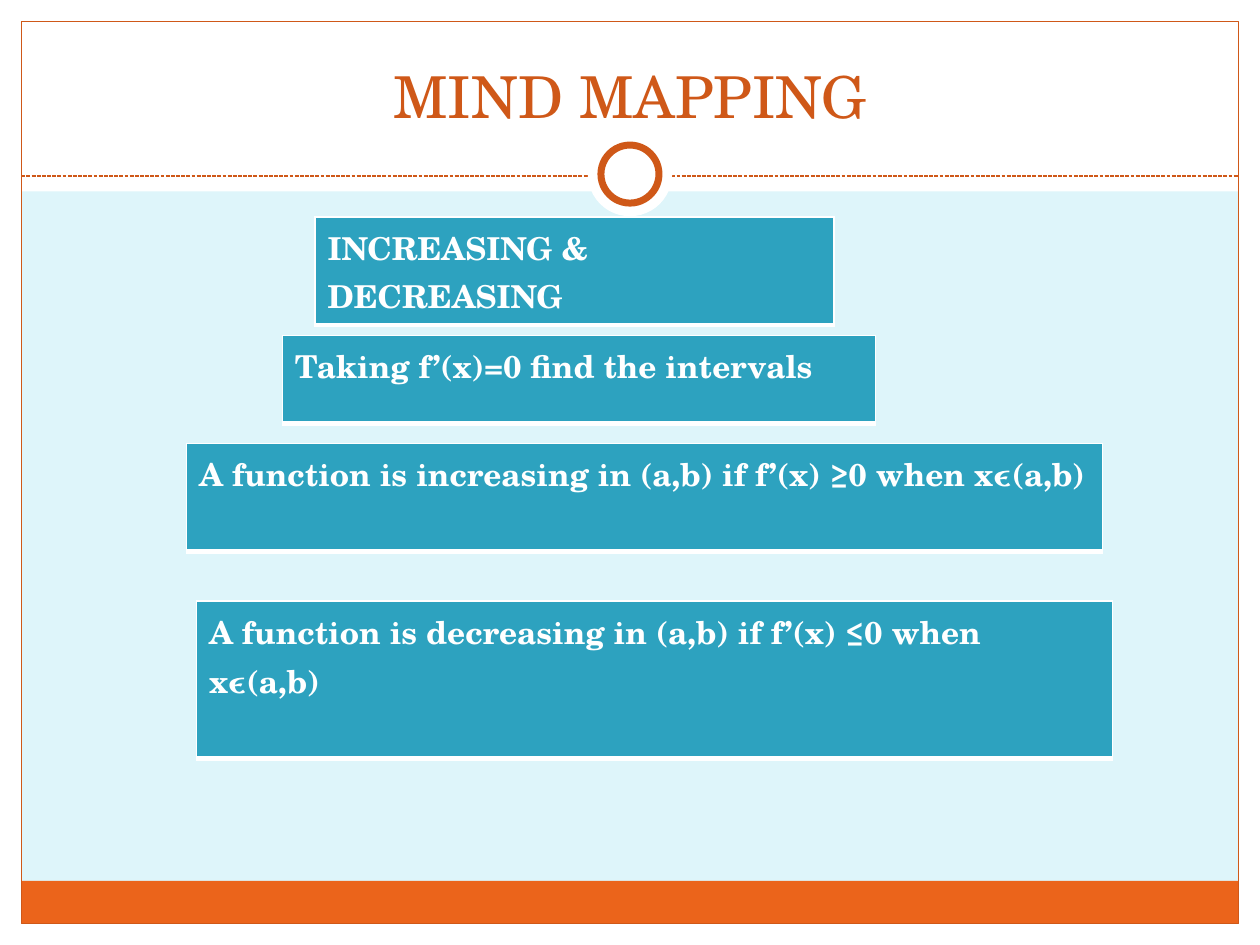
from lxml.etree import SubElement
from pptx import Presentation
from pptx.dml.color import RGBColor
from pptx.enum.dml import MSO_LINE_DASH_STYLE as Dash
from pptx.enum.shapes import MSO_CONNECTOR as Connector, MSO_SHAPE as Shape
from pptx.enum.text import MSO_ANCHOR as Anchor, PP_ALIGN as Align
from pptx.oxml.ns import qn
from pptx.util import Cm, Pt

FONT = "TeX Gyre Schola"
WHITE, SKY, TEAL = "FFFFFF", "DEF5FA", "2DA2BF"
ORANGE, RUST = "EB641B", "CF5818"
WIDTH, HEIGHT = 25.4, 19.05
MARGIN = 0.43


def color(value):
    return RGBColor.from_string(value)


def write(frame, text, size, fill, bold=False, align=Align.LEFT):
    frame.word_wrap = True
    paragraph = frame.paragraphs[0]
    paragraph.alignment = align
    run = paragraph.add_run()
    run.text = text
    run.font.name, run.font.size, run.font.bold = FONT, Pt(size), bold
    run.font.color.rgb = color(fill)


def add_shape(slide, kind, box, fill=None, line=None, line_width=0.75):
    shape = slide.shapes.add_shape(kind, *map(Cm, box))
    shape.shadow.inherit = False
    if fill:
        shape.fill.solid()
        shape.fill.fore_color.rgb = color(fill)
    else:
        shape.fill.background()
    if line:
        shape.line.color.rgb = color(line)
        shape.line.width = Pt(line_width)
    else:
        shape.line.fill.background()


def add_circle(slide, center_x, center_y, diameter, **style):
    box = (center_x - diameter / 2, center_y - diameter / 2, diameter, diameter)
    add_shape(slide, Shape.OVAL, box, **style)


def add_frame(slide, left, top, width, height):
    """White edges, footer band, border and ringed divider."""
    right, bottom = left + width, top + height
    header, footer = 3.86, 0.86
    edges = [
        (left, bottom - MARGIN, width, MARGIN),
        (left, top, width, header),
        (left, top, MARGIN, height),
        (right - MARGIN, top, MARGIN, height),
    ]
    for box in edges:
        add_shape(slide, Shape.RECTANGLE, box, fill=WHITE)

    inner_width = width - 2 * MARGIN
    band = (left + MARGIN, bottom - MARGIN - footer, inner_width, footer)
    add_shape(slide, Shape.RECTANGLE, band, fill=ORANGE)
    border = (left + MARGIN, top + MARGIN, inner_width, height - 2 * MARGIN)
    add_shape(slide, Shape.RECTANGLE, border, line=RUST)

    # Dashed divider
    divider_y = top + 3.55
    divider = slide.shapes.add_connector(
        Connector.STRAIGHT, Cm(left + MARGIN), Cm(divider_y),
        Cm(right - MARGIN), Cm(divider_y))
    divider.line.color.rgb = color(RUST)
    divider.line.width = Pt(0.75)
    divider.line.dash_style = Dash.SQUARE_DOT
    SubElement(divider._element.spPr, qn("a:effectLst"))

    # Ring on the divider
    center_x, center_y = left + width / 2, top + 3.51
    add_circle(slide, center_x, center_y, 1.7, fill=WHITE)
    add_circle(slide, center_x, center_y, 1.17, fill=WHITE, line=RUST, line_width=4)


def add_title(slide, text, left, top, width, height):
    box = slide.shapes.add_textbox(Cm(left), Cm(top), Cm(width), Cm(height))
    box.text_frame.vertical_anchor = Anchor.BOTTOM
    write(box.text_frame, text, 33, RUST, align=Align.CENTER)


def set_borders(cell, fill, widths):
    properties = cell._tc.get_or_add_tcPr()
    for index, (side, width) in enumerate(widths.items()):
        line = SubElement(properties, qn(f"a:ln{side}"), w=str(Pt(width)))
        solid = SubElement(line, qn("a:solidFill"))
        SubElement(solid, qn("a:srgbClr"), val=fill)
        properties.remove(line)
        properties.insert(index, line)


def add_step(slide, text, left, top, width, height):
    """One-cell table holding a step of the map."""
    frame = slide.shapes.add_table(1, 1, Cm(left), Cm(top), Cm(width), Cm(height))
    cell = frame.table.cell(0, 0)
    cell.fill.solid()
    cell.fill.fore_color.rgb = color(TEAL)
    set_borders(cell, WHITE, {"L": 1, "R": 1, "T": 1, "B": 3})
    write(cell.text_frame, text, 18, WHITE, bold=True)


def main():
    presentation = Presentation()
    presentation.slide_width, presentation.slide_height = Cm(WIDTH), Cm(HEIGHT)
    slide = presentation.slides.add_slide(presentation.slide_layouts[6])
    slide.background.fill.solid()
    slide.background.fill.fore_color.rgb = color(SKY)

    add_frame(slide, 0, 0, WIDTH, HEIGHT)
    add_title(slide, "MIND MAPPING", 0.85, 0.64, 23.7, 2.1)
    steps = [
        ("INCREASING & DECREASING", 6.35, 4.37, 10.46, 2.18),
        ("Taking f’(x)=0 find the intervals", 5.69, 6.76, 11.96, 1.78),
        ("A function is increasing in (a,b) if f’(x) ≥0 when xϵ(a,b)",
         3.76, 8.94, 18.47, 2.18),
        ("A function is decreasing in (a,b) if f’(x) ≤0 when xϵ(a,b)",
         3.96, 12.12, 18.47, 3.17),
    ]
    for step in steps:
        add_step(slide, *step)
    presentation.save("out.pptx")


if __name__ == "__main__":
    main()
